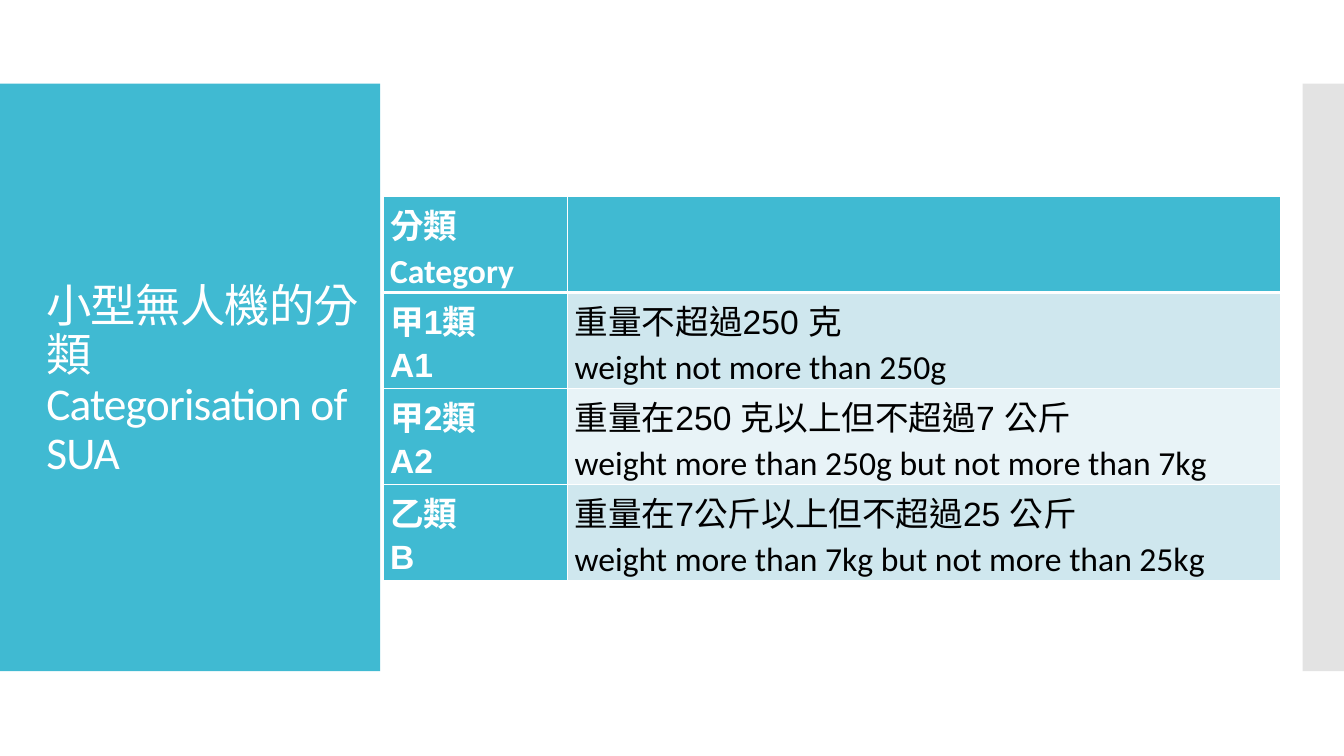
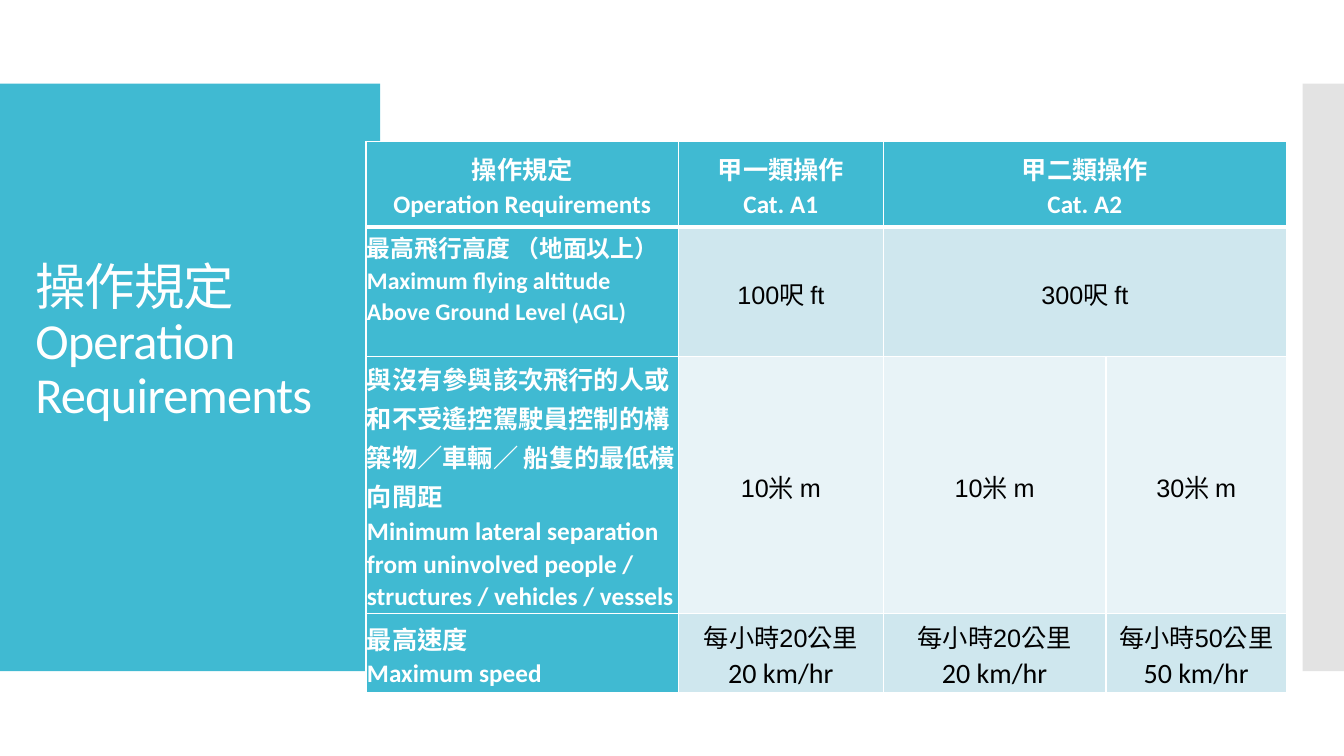
"""Build two slides on small unmanned aircraft: categories and operation requirements."""
from lxml.etree import SubElement
from pptx import Presentation
from pptx.dml.color import RGBColor
from pptx.enum.lang import MSO_LANGUAGE_ID as Lang
from pptx.enum.shapes import MSO_SHAPE as Shape
from pptx.enum.text import MSO_ANCHOR as Anchor, MSO_AUTO_SIZE as AutoSize, PP_ALIGN as Align
from pptx.oxml.ns import qn
from pptx.util import Inches, Pt

TEAL = RGBColor(0x40, 0xBA, 0xD2)
GREY = RGBColor(0xC8, 0xC8, 0xC8)
PALE = RGBColor(0xCF, 0xE7, 0xEE)
PALER = RGBColor(0xE8, 0xF3, 0xF7)
WHITE = RGBColor(0xFF, 0xFF, 0xFF)
BLACK = RGBColor(0, 0, 0)
ARIAL, CALIBRI = "Arial", "Calibri"


class Deck:
    def __init__(self):
        self.prs = Presentation()
        self.prs.slide_width, self.prs.slide_height = Inches(13.33), Inches(7.5)
        self.layout = self.prs.slide_layouts[5]
        self.slide = None

    def start_slide(self):
        self.slide = self.prs.slides.add_slide(self.layout)
        if len(self.prs.slides) == 1:
            self.move_bands_to_layout()

    def move_bands_to_layout(self):
        tree = self.layout.shapes._spTree
        for holder in list(self.layout.placeholders)[1:]:
            tree.remove(holder._element)
        for left, width, color, alpha in ((0, 3.77, TEAL, 100), (12.92, 0.42, GREY, 50)):
            band = self.slide.shapes.add_shape(
                Shape.RECTANGLE, Inches(left), Inches(0.83), Inches(width), Inches(5.83))
            band.shadow.inherit = False
            band.line.fill.background()
            band.fill.solid()
            band.fill.fore_color.rgb = color
            tone = band._element.spPr.find(qn("a:solidFill")).find(qn("a:srgbClr"))
            SubElement(tone, qn("a:alpha"), val=str(alpha * 1000))
            tree.append(band._element)

    def run(self, paragraph, text, font, size, color, bold=False):
        run = paragraph.add_run()
        run.text = text
        run.font.name, run.font.size, run.font.bold = font, Pt(size), bold
        run.font.color.rgb = color
        chinese = any("\u4e00" <= letter <= "\u9fff" for letter in text)
        run.font.language_id = Lang.TRADITIONAL_CHINESE if chinese else Lang.ENGLISH_UK
        return run

    def title(self, box, lines, size):
        title = self.slide.shapes.title
        title.left, title.top, title.width, title.height = map(Inches, box)
        frame = title.text_frame
        frame.word_wrap, frame.auto_size = True, AutoSize.NONE
        frame.vertical_anchor = Anchor.MIDDLE
        frame.margin_bottom = Inches(0.05 + size * 0.015)
        paragraph = frame.paragraphs[0]
        paragraph.alignment, paragraph.line_spacing = Align.LEFT, 0.9
        for index, (text, font) in enumerate(lines):
            if index:
                paragraph.add_line_break()
            run = self.run(paragraph, text, font, size, WHITE)
            run.font._element.set("spc", "-60")

    def borders(self, cell, row):
        properties = cell._tc.get_or_add_tcPr()
        widths = {"L": 1, "R": 1, "T": 3 if row == 1 else 1, "B": 1 if row else 3}
        for index, (side, width) in enumerate(widths.items()):
            edge = SubElement(properties, qn(f"a:ln{side}"), w=str(Pt(width)))
            SubElement(SubElement(edge, qn("a:solidFill")), qn("a:srgbClr"), val=str(WHITE))
            properties.insert(index, edge)

    def cell_text(self, cell, lines, size, color, bold, align):
        frame = cell.text_frame
        for index, (text, font, *own_size) in enumerate(lines):
            paragraph = frame.add_paragraph() if index else frame.paragraphs[0]
            paragraph.alignment, paragraph.line_spacing = align, 1.07
            self.run(paragraph, text, font, own_size[0] if own_size else size, color, bold)

    def table(self, corner, widths, heights, rows, size, margins, centred=False):
        left, top = map(Inches, corner)
        table = self.slide.shapes.add_table(
            len(heights), len(widths), left, top,
            Inches(sum(widths)), Inches(sum(heights))).table
        for column, width in zip(table.columns, widths):
            column.width = Inches(width)
        for r, (height, contents) in enumerate(zip(heights, rows)):
            table.rows[r].height = Inches(height)
            for c, lines in enumerate(contents):
                cell = table.cell(r, c)
                heading = r == 0 or c == 0
                cell.fill.solid()
                cell.fill.fore_color.rgb = TEAL if heading else (PALER, PALE)[r % 2]
                self.borders(cell, r)
                cell.margin_left = cell.margin_right = Inches(margins[0])
                cell.margin_top = cell.margin_bottom = Inches(margins[1])
                cell.vertical_anchor = Anchor.MIDDLE if centred else Anchor.TOP
                if lines is None:
                    table.cell(r, c - 1).merge(cell)
                    continue
                middle = centred and (r == 0 or c > 0)
                self.cell_text(cell, lines, size, WHITE if heading else BLACK,
                               heading, Align.CENTER if middle else Align.LEFT)
        return table


def bilingual(chinese, english, *english_size):
    return [(chinese, ARIAL), (english, CALIBRI, *english_size)]


def category(chinese, code, weight_chinese, weight_english):
    return [[(chinese, ARIAL), (code, ARIAL)], bilingual(weight_chinese, weight_english)]


def speed(value):
    return bilingual(f"每小時{value}公里", f"{value} km/hr", 20)


def categories_slide(deck):
    deck.start_slide()
    deck.title((0.36, 3.2, 3.44, 1.66),
               [("小型無人機的分類", CALIBRI), ("Categorisation of SUA", CALIBRI)], 32.4)
    rows = [
        [bilingual("分類", "Category"), []],
        category("甲1類", "A1", "重量不超過250 克", "weight not more than 250g"),
        category("甲2類", "A2", "重量在250 克以上但不超過7 公斤",
                 "weight more than 250g but not more than 7kg"),
        category("乙類", "B", "重量在7公斤以上但不超過25 公斤",
                 "weight more than 7kg but not more than 25kg"),
    ]
    deck.table((3.8, 1.95), [1.83, 7.07], [0.95] * 4, rows, 24, (0.07, 0))


def requirements_slide(deck):
    deck.start_slide()
    deck.title((0.25, 1.16, 3.22, 5.03),
               bilingual("操作規定", "Operation Requirements"), 36)
    altitude = [(text, CALIBRI, 17) for text in (
        "最高飛行高度 （地面以上）", "Maximum flying altitude", "Above Ground Level (AGL)")]
    separation = [
        ("與沒有參與該次飛行的人或和不受遙控駕駛員控制的構築物／車輛／ 船隻的最低橫向間距", CALIBRI),
        ("Minimum lateral separation from uninvolved people / structures / vehicles / vessels",
         CALIBRI)]
    rows = [
        [bilingual("操作規定", "Operation Requirements"),
         bilingual("甲一類操作", "Cat. A1"), bilingual("甲二類操作", "Cat. A2"), None],
        [altitude, [("100呎 ft", ARIAL)], [("300呎 ft", ARIAL)], None],
        [separation, *([(f"{metres}米 m", ARIAL)] for metres in (10, 10, 30))],
        [[("最高速度", CALIBRI), ("Maximum speed", CALIBRI)], *map(speed, (20, 20, 50))],
    ]
    table = deck.table((3.63, 1.4), [3.1, 2.03, 2.21, 1.79], [0.85, 1.29, 2.55, 0.78],
                       rows, 18, (0.01, 0.01), centred=True)
    table.cell(1, 0).vertical_anchor = Anchor.TOP


def main():
    deck = Deck()
    categories_slide(deck)
    requirements_slide(deck)
    deck.prs.save("out.pptx")


if __name__ == "__main__":
    main()
